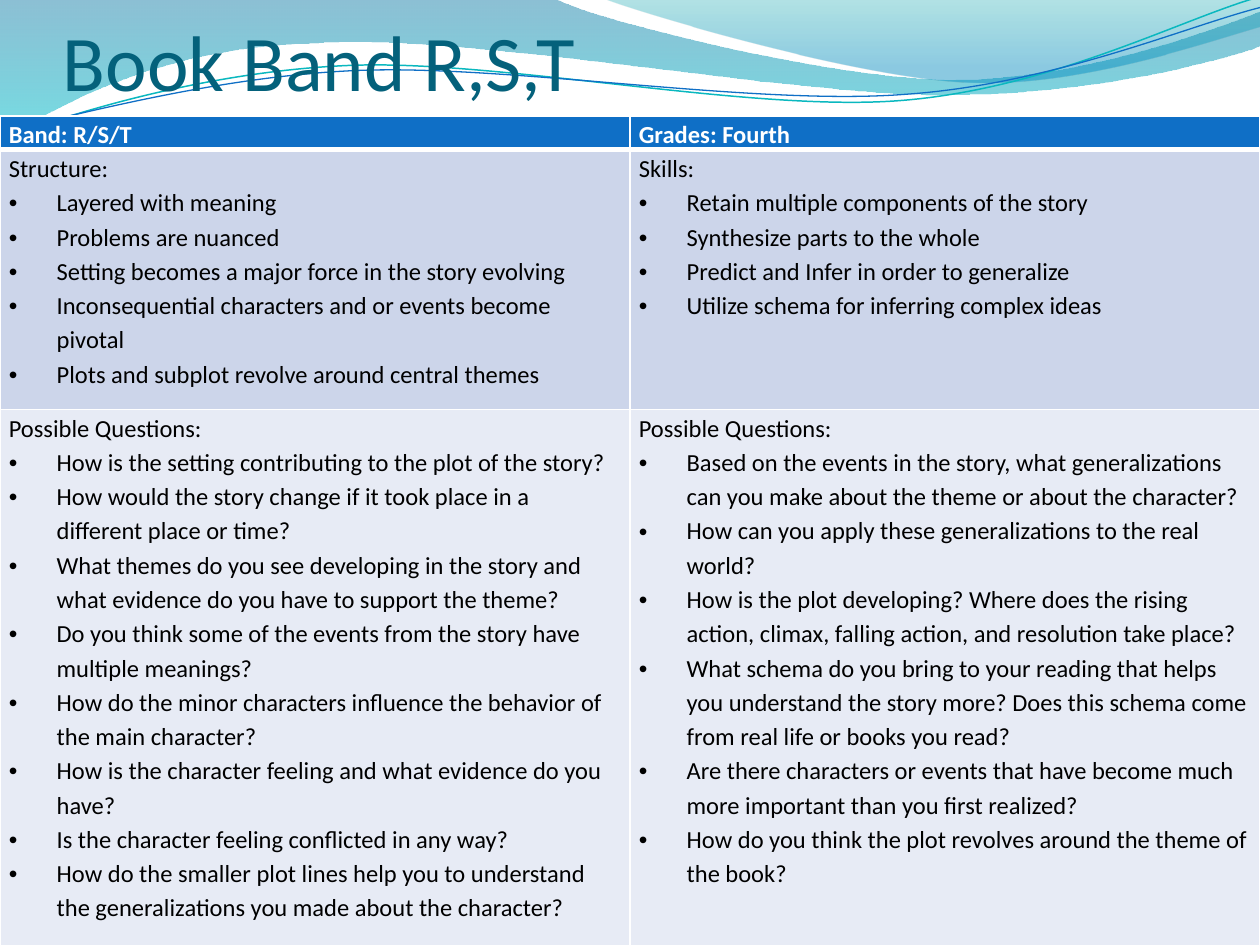
from dataclasses import dataclass
from typing import Optional

from lxml.etree import SubElement
from pptx import Presentation
from pptx.dml.color import RGBColor
from pptx.enum.text import MSO_ANCHOR
from pptx.oxml.ns import qn
from pptx.util import Inches, Pt

COLORS = {
    "white": "FFFFFF", "black": "000000", "title": "04617B",
    "header": "0F6FC6", "upper_row": "CCD5EA", "lower_row": "E7EBF5",
    "deep_blue": "0074A1", "cyan": "00C6CF", "teal": "00A1A9",
    "sky": "008BBF", "teal_line": "0AB8BF", "blue_line": "0F6FC6",
}
FONT = "Calibri"


@dataclass
class GradientPoint:
    position: float
    color: str
    opacity: int


@dataclass
class Wave:
    """Outline of points: two numbers are a line, six a Bezier curve."""
    start: tuple[float, float]
    segments: list[tuple[float, ...]]
    gradient: Optional[tuple[GradientPoint, GradientPoint]] = None
    line_color: str = ""
    line_width: float = 0


@dataclass
class CellText:
    heading: str
    bullets: tuple[str, ...] = ()


@dataclass
class Row:
    height: float
    fill: str
    cells: tuple[CellText, CellText]
    top_border: float = 1
    bottom_border: float = 1
    text_color: str = "black"
    bold: bool = False


WAVES = [
    Wave((0, 0), [(4.4, -0.01), (4.76, 0.17, 6.64, 0.63, 7.58, 0.63),
                  (8.53, 0.63, 9.58, 0.26, 10, 0.09), (10.01, 0.36),
                  (9.83, 0.44, 8.7, 0.76, 7.46, 0.75),
                  (6.22, 0.75, 3.82, 0.28, 2.57, 0.34),
                  (1.29, 0.36, 0.46, 0.83, -0.01, 1.13), (0, 0)],
         gradient=(GradientPoint(0, "deep_blue", 45), GradientPoint(1, "cyan", 55))),
    Wave((4.79, -0.01), [(5.09, 0.11, 6.82, 0.62, 7.69, 0.65),
                         (8.56, 0.69, 9.61, 0.32, 10, 0.21), (10, 0), (4.79, -0.01)],
         gradient=(GradientPoint(0, "teal", 30), GradientPoint(0.8, "sky", 45))),
    Wave((0, 1.11), [(0.48, 0.93, 1.58, 0.57, 2.77, 0.52),
                     (3.95, 0.47, 5.93, 0.89, 7.13, 0.8),
                     (8.33, 0.71, 9.38, 0.15, 9.98, -0.02)],
         line_color="teal_line", line_width=0.85),
    Wave((0, 1.04), [(0.47, 0.96, 1.64, 0.61, 2.83, 0.56),
                     (4.03, 0.51, 5.97, 0.84, 7.17, 0.75),
                     (8.36, 0.67, 9.41, 0.21, 10, 0.06)],
         line_color="blue_line", line_width=0.75),
]

ROWS = [
    Row(0.25, "header", (CellText("Band: R/S/T"), CellText("Grades: Fourth")),
        bottom_border=3, text_color="white", bold=True),
    Row(2.06, "upper_row", (
        CellText("Structure:", (
            "Layered with meaning",
            "Problems are nuanced",
            "Setting becomes a major force in the story evolving",
            "Inconsequential characters and or events become pivotal",
            "Plots and subplot revolve around central themes")),
        CellText("Skills:", (
            "Retain multiple components of the story",
            "Synthesize parts to the whole",
            "Predict and Infer in order to generalize",
            "Utilize schema for inferring complex ideas"))), top_border=3),
    Row(4.66, "lower_row", (
        CellText("Possible Questions:", (
            "How is the setting contributing to the plot of the story?",
            "How would the story change if it took place in a different place or time?",
            "What themes do you see developing in the story and what evidence do you have to support the theme?",
            "Do you think some of the events from the story have multiple meanings?",
            "How do the minor characters influence the behavior of the main character?",
            "How is the character feeling and what evidence do you have?",
            "Is the character feeling conflicted in any way?",
            "How do the smaller plot lines help you to understand the generalizations you made about the character?")),
        CellText("Possible Questions:", (
            "Based on the events in the story, what generalizations can you make about the theme or about the character?",
            "How can you apply these generalizations to the real world?",
            "How is the plot developing? Where does the rising action, climax, falling action, and resolution take place?",
            "What schema do you bring to your reading that helps you understand the story more? Does this schema come from real life or books you read?",
            "Are there characters or events that have become much more important than you first realized?",
            "How do you think the plot revolves around the theme of the book?")))),
]


def rgb(name: str) -> RGBColor:
    return RGBColor.from_string(COLORS[name])


def apply_format(target, values: dict) -> None:
    for name, value in values.items():
        setattr(target, name, value)


def add_text(paragraph, text: str, size: float, color: str, bold: bool = False) -> None:
    run = paragraph.add_run()
    run.text = text
    apply_format(run.font, {"name": FONT, "size": Pt(size), "bold": bold})
    run.font.color.rgb = rgb(color)


def bend_segments(shape, wave: Wave) -> None:
    """Turn the straight segments that have control points into curves."""
    lines = list(shape.element.iter(qn("a:lnTo")))
    for line, segment in zip(lines, wave.segments):
        if len(segment) == 2:
            continue
        line.tag = qn("a:cubicBezTo")
        line.clear()
        for x, y in zip(segment[::2], segment[1::2]):
            SubElement(line, qn("a:pt"), x=str(Inches(x) - shape.left),
                       y=str(Inches(y) - shape.top))


def add_wave(slide, wave: Wave) -> None:
    builder = slide.shapes.build_freeform(*map(Inches, wave.start))
    ends = [(Inches(segment[-2]), Inches(segment[-1])) for segment in wave.segments]
    builder.add_line_segments(ends, close=wave.gradient is not None)
    shape = builder.convert_to_shape()
    bend_segments(shape, wave)
    shape.shadow.inherit = False
    if wave.gradient is None:
        shape.fill.background()
        shape.line.color.rgb = rgb(wave.line_color)
        shape.line.width = Pt(wave.line_width)
        return
    shape.line.fill.background()
    shape.fill.gradient()
    shape.fill.gradient_angle = 270
    for stop, point in zip(shape.fill.gradient_stops, wave.gradient):
        stop.color.rgb = rgb(point.color)
        stop.position = point.position
    # Opacity of the gradient stops
    for color, point in zip(shape.element.iter(qn("a:srgbClr")), wave.gradient):
        SubElement(color, qn("a:alpha"), val=str(point.opacity * 1000))


def add_title(slide, text: str) -> None:
    frame = slide.shapes.add_textbox(Inches(0.5), Inches(0), Inches(9), Inches(0.85)).text_frame
    apply_format(frame, {"word_wrap": True, "vertical_anchor": MSO_ANCHOR.BOTTOM,
                         "margin_left": 0, "margin_right": 0,
                         "margin_top": Inches(0.05), "margin_bottom": 0})
    add_text(frame.paragraphs[0], text, 45, "title")


def set_borders(cell, row: Row) -> None:
    properties = cell._tc.get_or_add_tcPr()
    widths = {"L": 1, "R": 1, "T": row.top_border, "B": row.bottom_border}
    for side, width in widths.items():
        line = SubElement(properties, qn(f"a:ln{side}"), w=str(Pt(width)))
        fill = SubElement(line, qn("a:solidFill"))
        SubElement(fill, qn("a:srgbClr"), val=COLORS["white"])


def fill_cell(cell, content: CellText, row: Row) -> None:
    set_borders(cell, row)
    cell.fill.solid()
    cell.fill.fore_color.rgb = rgb(row.fill)
    apply_format(cell, {"margin_left": Inches(0.07), "margin_right": Inches(0.07),
                        "margin_top": 0, "margin_bottom": 0})
    frame = cell.text_frame
    for index, text in enumerate((content.heading, *content.bullets)):
        paragraph = frame.add_paragraph() if index else frame.paragraphs[0]
        paragraph.line_spacing = 1.15
        add_text(paragraph, text, 14, row.text_color, row.bold)
        if index:
            properties = paragraph._p.get_or_add_pPr()
            properties.set("marL", str(Inches(0.38)))
            properties.set("indent", str(Inches(-0.38)))
            SubElement(properties, qn("a:buFont"), typeface="Arial")
            SubElement(properties, qn("a:buChar"), char="•")


def add_band_table(slide) -> None:
    height = sum(row.height for row in ROWS)
    table = slide.shapes.add_table(len(ROWS), 2, Inches(0), Inches(0.92),
                                   Inches(10), Inches(height)).table
    for row_index, row in enumerate(ROWS):
        table.rows[row_index].height = Inches(row.height)
        for column_index, content in enumerate(row.cells):
            fill_cell(table.cell(row_index, column_index), content, row)


def main() -> None:
    presentation = Presentation()
    apply_format(presentation, {"slide_width": Inches(10), "slide_height": Inches(7.5)})
    slide = presentation.slides.add_slide(presentation.slide_layouts[6])
    # Decorative waves
    for wave in WAVES:
        add_wave(slide, wave)
    # Title and table
    add_title(slide, "Book Band R,S,T")
    add_band_table(slide)
    presentation.save("out.pptx")


if __name__ == "__main__":
    main()
